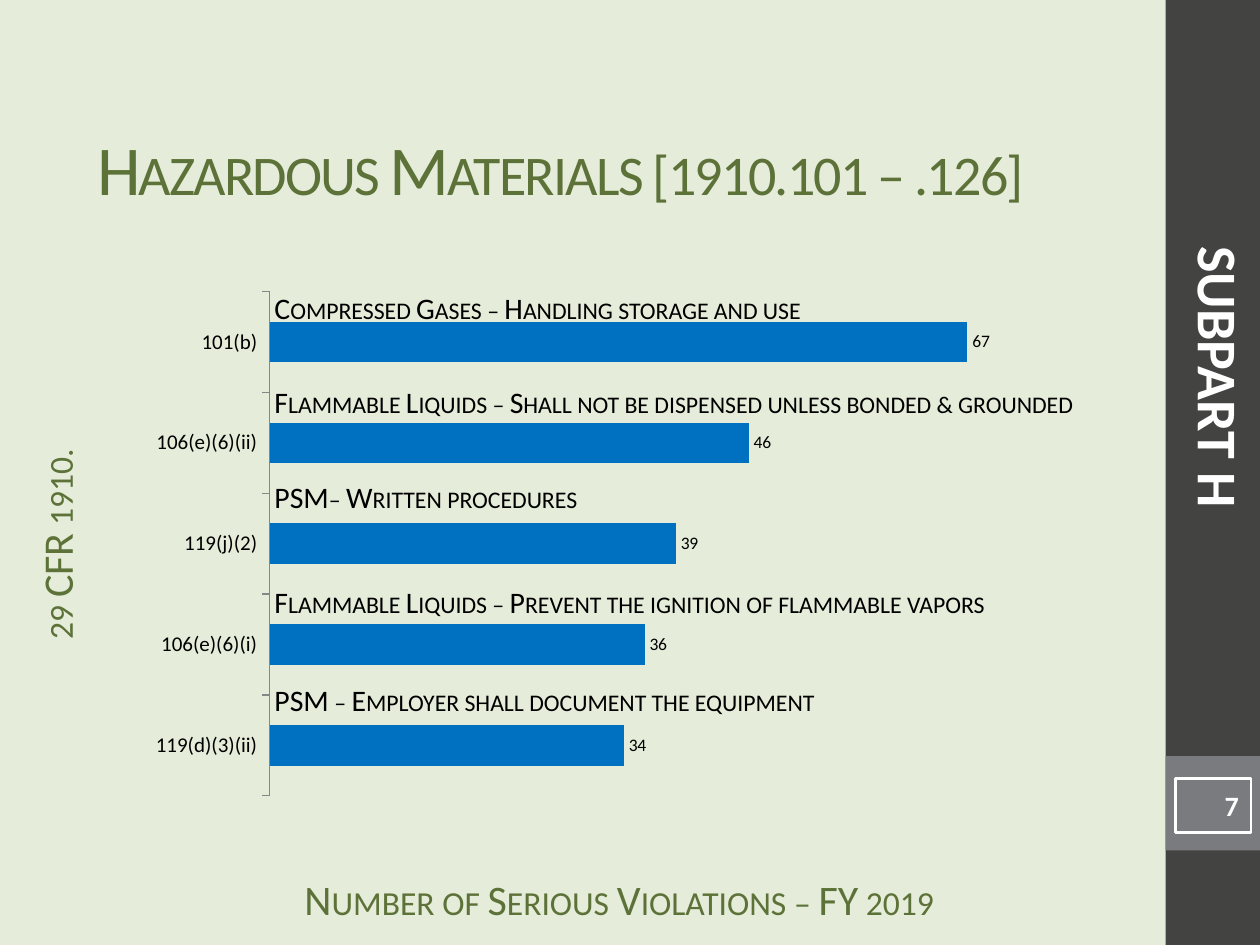
from pptx import Presentation
from pptx.chart.data import CategoryChartData
from pptx.dml.color import RGBColor
from pptx.enum.chart import XL_CHART_TYPE, XL_LABEL_POSITION, XL_TICK_MARK
from pptx.enum.shapes import MSO_SHAPE
from pptx.enum.text import MSO_ANCHOR, MSO_AUTO_SIZE, PP_ALIGN
from pptx.util import Inches, Pt

FONT = "Calibri"
COLORS = {
    "background": "E5ECD9",
    "sidebar": "434342",
    "number_band": "797B7E",
    "heading": "5D7238",
    "bar": "0070C0",
    "axis": "868686",
    "black": "000000",
    "white": "FFFFFF",
}

VIOLATIONS = [
    ("119(d)(3)(ii)", 34),
    ("106(e)(6)(i)", 36),
    ("119(j)(2)", 39),
    ("106(e)(6)(ii)", 46),
    ("101(b)", 67),
]

# Text, top, width, wrap
BAR_CAPTIONS = [
    ("Compressed Gases – Handling storage and use", 2.25, 5.58, True),
    ("Flammable Liquids – Shall not be dispensed unless bonded & grounded", 3, 6.78, False),
    ("PSM– Written procedures", 3.75, 2.67, False),
    ("Flammable Liquids – Prevent the ignition of flammable vapors", 4.58, 6.17, True),
    ("PSM – Employer shall document the equipment", 5.36, 5.32, True),
]


def color(name):
    return RGBColor.from_string(COLORS[name])


def place(shape, left, top, width, height):
    shape.left, shape.top = Inches(left), Inches(top)
    shape.width, shape.height = Inches(width), Inches(height)


def write(shape, text, size, color_name, align=PP_ALIGN.LEFT, bold=False, small_caps=False):
    paragraph = shape.text_frame.paragraphs[0]
    paragraph.alignment = align
    run = paragraph.add_run()
    run.text = text
    run.font.name = FONT
    run.font.size = Pt(size)
    run.font.bold = bold
    run.font.color.rgb = color(color_name)
    if small_caps:
        run._r.get_or_add_rPr().set("cap", "small")
    return run


def add_title(slide, text):
    title = slide.shapes.title
    place(title, 0.67, 0.58, 8.56, 1.5)
    title.text_frame.word_wrap = True
    title.text_frame.auto_size = MSO_AUTO_SIZE.NONE
    title.text_frame.vertical_anchor = MSO_ANCHOR.MIDDLE
    run = write(title, text, 40, "heading", small_caps=True)
    run._r.get_or_add_rPr().set("spc", "-100")


def add_rectangle(slide, box, fill=None, line=None):
    shape = slide.shapes.add_shape(MSO_SHAPE.RECTANGLE, *map(Inches, box))
    shape.shadow.inherit = False
    if fill:
        shape.fill.solid()
        shape.fill.fore_color.rgb = color(fill)
    else:
        shape.fill.background()
    if line:
        shape.line.color.rgb = color(line)
        shape.line.width = Pt(1.5)
    else:
        shape.line.fill.background()
    return shape


def add_text(slide, box, text, size, color_name, rotation=0, wrap=True, **style):
    text_box = slide.shapes.add_textbox(*map(Inches, box))
    text_box.rotation = rotation
    text_box.text_frame.word_wrap = wrap
    write(text_box, text, size, color_name, **style)
    return text_box


def add_axis_label(slide, box, text, rotation=0):
    label = add_text(slide, box, text, 24, "heading", rotation,
                     align=PP_ALIGN.CENTER, small_caps=True)
    label.text_frame.margin_top = 0


def add_violations_chart(slide):
    data = CategoryChartData()
    data.categories = [section for section, count in VIOLATIONS]
    data.add_series("Series 1", [count for section, count in VIOLATIONS])
    box = map(Inches, (1.08, 2.23, 7.83, 4.17))
    chart = slide.shapes.add_chart(XL_CHART_TYPE.BAR_CLUSTERED, *box, data).chart
    chart.has_legend = False
    chart.has_title = False
    chart.font.name = FONT
    chart.font.size = Pt(10)
    chart.font.color.rgb = color("black")

    category_axis = chart.category_axis
    category_axis.tick_labels.font.size = Pt(12)
    category_axis.major_tick_mark = XL_TICK_MARK.OUTSIDE
    category_axis.format.line.color.rgb = color("axis")
    value_axis = chart.value_axis
    value_axis.visible = False
    value_axis.has_major_gridlines = False
    value_axis.minimum_scale = 0
    value_axis.maximum_scale = 80

    plot = chart.plots[0]
    plot.gap_width = 150
    plot.vary_by_categories = False
    fill = plot.series[0].format.fill
    fill.solid()
    fill.fore_color.rgb = color("bar")
    plot.has_data_labels = True
    plot.data_labels.show_value = True
    plot.data_labels.position = XL_LABEL_POSITION.OUTSIDE_END


def add_slide_number(slide, number):
    frame = add_rectangle(slide, (9.33, 6.18, 0.6, 0.43), line="white")
    frame.text_frame.vertical_anchor = MSO_ANCHOR.MIDDLE
    write(frame, str(number), 16, "white", align=PP_ALIGN.RIGHT, bold=True)


def main():
    presentation = Presentation()
    presentation.slide_width = Inches(10)
    presentation.slide_height = Inches(7.5)
    slide = presentation.slides.add_slide(presentation.slide_layouts[5])
    slide.background.fill.solid()
    slide.background.fill.fore_color.rgb = color("background")

    add_rectangle(slide, (9.25, 0, 0.75, 7.5), fill="sidebar")
    add_rectangle(slide, (9.25, 6, 0.75, 0.75), fill="number_band")
    add_axis_label(slide, (2.08, 6.93, 5.67, 0.33), "Number of Serious Violations – FY 2019")
    add_axis_label(slide, (-1.56, 4.03, 4.19, 0.58), "29 CFR 1910.", rotation=270)
    add_violations_chart(slide)
    add_title(slide, "Hazardous Materials [1910.101 – .126]")
    add_slide_number(slide, 7)
    for text, top, width, wrap in BAR_CAPTIONS:
        add_text(slide, (2.08, top, width, 0.39), text, 17, "black",
                 wrap=wrap, small_caps=True)
    add_text(slide, (6.69, 2.67, 5.98, 0.64), "SUBPART H", 32, "white",
             rotation=90, align=PP_ALIGN.CENTER, bold=True)
    presentation.save("out.pptx")


if __name__ == "__main__":
    main()
